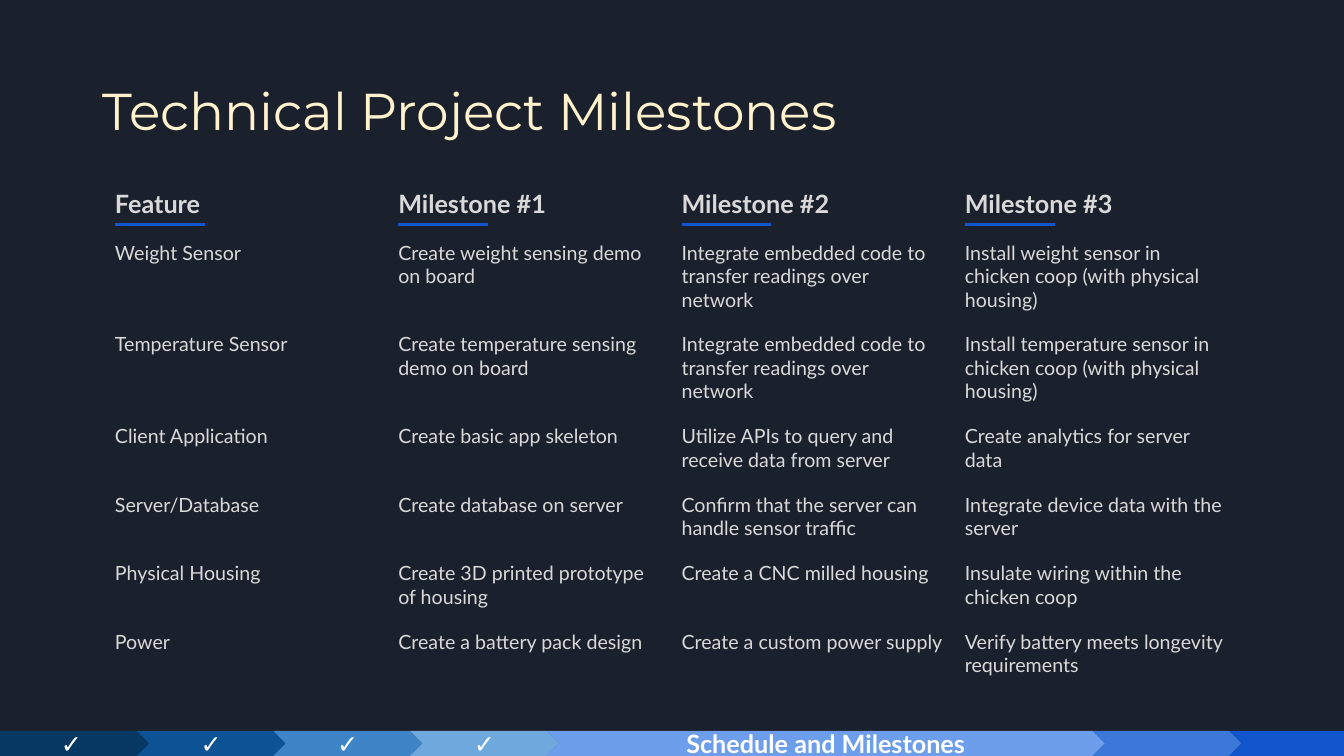
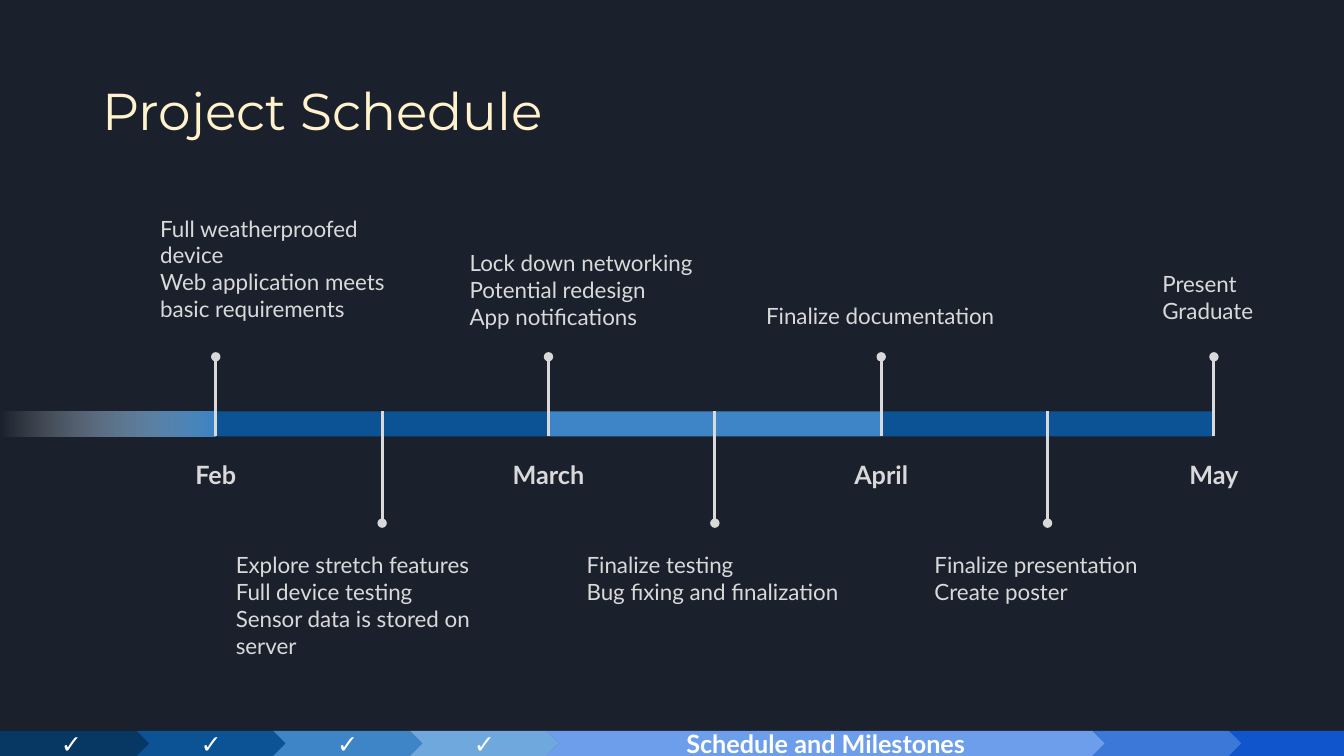
from lxml import etree
from pptx import Presentation
from pptx.dml.color import RGBColor
from pptx.enum import shapes, text
from pptx.oxml.ns import qn
from pptx.util import Inches, Pt

WIDE, HIGH = 13.33, 7.5
NIGHT, CREAM, PALE, WHITE = "1B212C", "FFF2CC", "D9D9D9", "FFFFFF"
NAVY, SKY, ROYAL = "0B5394", "3D85C6", "1155CC"
HEAD, BODY = "Montserrat", "Lato"
PLAIN = "{2D5ABB26-0587-4C30-8999-92F81FD0307C}"
SHAPE = shapes.MSO_SHAPE
MID, TOP = text.MSO_ANCHOR.MIDDLE, text.MSO_ANCHOR.TOP
LEFT, CENTER = text.PP_ALIGN.LEFT, text.PP_ALIGN.CENTER

STEPS = [
    (1.48, "073763", "✓"),
    (1.48, NAVY, "✓"),
    (1.48, SKY, "✓"),
    (1.48, "6FA8DC", "✓"),
    (5.54, "6D9EEB", "Schedule and Milestones"),
    (1.48, "3C78D8", ""),
    (1.48, ROYAL, ""),
]

GOALS = [
    ("Feature", "Milestone #1", "Milestone #2", "Milestone #3"),
    ("Weight Sensor", "Create weight sensing demo on board",
     "Integrate embedded code to transfer readings over network",
     "Install weight sensor in chicken coop (with physical housing)"),
    ("Temperature Sensor", "Create temperature sensing demo on board",
     "Integrate embedded code to transfer readings over network",
     "Install temperature sensor in chicken coop (with physical housing)"),
    ("Client Application", "Create basic app skeleton",
     "Utilize APIs to query and receive data from server",
     "Create analytics for server data"),
    ("Server/Database", "Create database on server",
     "Confirm that the server can handle sensor traffic",
     "Integrate device data with the server"),
    ("Physical Housing", "Create 3D printed prototype of housing",
     "Create a CNC milled housing",
     "Insulate wiring within the chicken coop"),
    ("Power", "Create a battery pack design",
     "Create a custom power supply",
     "Verify battery meets longevity requirements"),
]
ROWS = [0.52, 0.91, 0.91, 0.68, 0.68, 0.68, 0.68]

MONTHS = ["Feb", "March", "April", "May"]
BARS = [NAVY, SKY, NAVY]
ABOVE = [
    (-0.65, -2.05, 2.51, "Full weatherproofed device\nWeb application meets basic requirements"),
    (-0.88, -1.71, 2.77, "Lock down networking\nPotential redesign\nApp notifications"),
    (-1.24, -1.18, 2.51, "Finalize documentation"),
    (-0.61, -1.5, 1.22, "Present\nGraduate"),
]
BELOW = [
    (-1.55, 1.29, 3.1, "Explore stretch features\nFull device testing\nSensor data is stored on server"),
    (-1.37, 1.29, 2.77, "Finalize testing\nBug fixing and finalization"),
    (-1.22, 1.29, 2.43, "Finalize presentation\nCreate poster"),
]


def tint(code):
    """Turn a hex string into a colour."""
    return RGBColor.from_string(code)


def inch(*sizes):
    """Turn numbers into lengths in inches."""
    return [Inches(size) for size in sizes]


def write(frame, words, size, color, font=BODY, bold=False, align=LEFT):
    """Fill a text frame and format its runs."""
    frame.text = words
    frame.word_wrap = True
    for para in frame.paragraphs:
        para.alignment = align
        for run in para.runs:
            run.font.size, run.font.name, run.font.bold = Pt(size), font, bold
            run.font.color.rgb = tint(color)


def label(slide, box, words, size, color, anchor=TOP, pad=0.1, **style):
    """Add a wrapped text box and return its frame."""
    frame = slide.shapes.add_textbox(*inch(*box)).text_frame
    write(frame, words, size, color, **style)
    frame.vertical_anchor = anchor
    frame.margin_left = frame.margin_right = Inches(0.1)
    frame.margin_top = frame.margin_bottom = Inches(pad)
    return frame


def block(slide, kind, box, color):
    """Add a flat filled shape."""
    shape = slide.shapes.add_shape(kind, *inch(*box))
    shape.shadow.inherit = False
    shape.fill.solid()
    shape.fill.fore_color.rgb = tint(color)
    shape.line.fill.background()
    return shape


def rule(slide, ends, color, dot=False):
    """Add a straight line, with a round tip if asked."""
    line = slide.shapes.add_connector(shapes.MSO_CONNECTOR.STRAIGHT, *inch(*ends))
    line.line.color.rgb = tint(color)
    line.line.width = Pt(2.25)
    props = line._element.spPr
    if dot:
        etree.SubElement(props.find(qn("a:ln")), qn("a:tailEnd")).set("type", "oval")
    etree.SubElement(props, qn("a:effectLst"))
    return line


def footer(slide, box):
    """Draw the overlapping progress arrows."""
    left, top, _, high = box
    for spot, (wide, color, words) in enumerate(STEPS):
        kind = SHAPE.CHEVRON if spot else SHAPE.PENTAGON
        arrow = block(slide, kind, (left, top, wide, high), color)
        if words:
            frame = arrow.text_frame
            write(frame, words, 18, WHITE, bold=True, align=CENTER)
            frame.vertical_anchor = MID
            frame.margin_top = frame.margin_bottom = Inches(0.1)
        left += wide - high / 2


def page(deck, title):
    """Add a slide with its title and footer."""
    slide = deck.slides.add_slide(deck.slide_layouts[6])
    frame = label(slide, (0.92, 0.4, 11.5, 1.45), title, 37, CREAM,
                  anchor=MID, pad=0.05, font=HEAD)
    frame.paragraphs[0].line_spacing = 0.9
    footer(slide, (0, HIGH - 0.25, WIDE, 0.25))
    return slide


def clear(cell):
    """Strip the fill and borders of a cell."""
    props = cell._tc.get_or_add_tcPr()
    for side in ("lnL", "lnR", "lnT", "lnB"):
        etree.SubElement(etree.SubElement(props, qn("a:" + side)), qn("a:noFill"))
    cell.fill.background()


def goals(slide, box):
    """Draw the milestone table and the header underlines."""
    left, top, wide, _ = box
    count = len(GOALS[0])
    step = wide / count
    table = slide.shapes.add_table(len(GOALS), count, *inch(*box)).table
    table.first_row = table.horz_banding = False
    table._tbl.tblPr.find(qn("a:tableStyleId")).text = PLAIN
    for col in range(count):
        table.columns[col].width = Inches(step)
        start = left + col * step + 0.1
        rule(slide, (start, top + 0.46, start + 0.89, top + 0.46), ROYAL)
    for row, items in enumerate(GOALS):
        table.rows[row].height = Inches(ROWS[row])
        for col, words in enumerate(items):
            cell = table.cell(row, col)
            clear(cell)
            cell.margin_left = cell.margin_right = Inches(0.1)
            cell.margin_top = cell.margin_bottom = Inches(0.1)
            write(cell.text_frame, words, 14 if row else 18, PALE, bold=not row)


def fade(slide, box):
    """Draw the bar that fades in from the left."""
    bar = block(slide, SHAPE.RECTANGLE, box, SKY)
    bar.fill.gradient()
    bar.fill.gradient_angle = 0
    for stop, color in zip(bar.fill.gradient_stops, (WHITE, SKY)):
        stop.color.rgb = tint(color)
    clear_end = bar._element.spPr.xpath(".//a:gs/a:srgbClr")[0]
    etree.SubElement(clear_end, qn("a:alpha")).set("val", "0")


def notes(slide, marks, top, items):
    """Place each note relative to its mark on the axis."""
    for mark, (shift, drop, wide, words) in zip(marks, items):
        high = 0.2 + 0.27 * len(words.split("\n"))
        label(slide, (mark + shift, top + drop, wide, high), words, 16, PALE)


def axis(slide, box):
    """Draw the month bars, pins, names and notes."""
    left, top, wide, high = box
    step = wide / len(BARS)
    marks = [left + step * spot for spot in range(len(MONTHS))]
    mids = [mark + step / 2 for mark in marks[:-1]]
    fade(slide, (0, top, left, high))
    bars = [block(slide, SHAPE.RECTANGLE, (mark, top, step, high), color)
            for mark, color in zip(marks, BARS)]
    for mid, bar in zip(mids, bars):
        rule(slide, (mid, top, mid, top + 1.11), PALE, dot=True).begin_connect(bar, 0)
    for mark, month in zip(marks, MONTHS):
        rule(slide, (mark, top + high, mark, top - 0.54), PALE, dot=True)
        label(slide, (mark - 0.61, top + 0.38, 1.22, 0.51), month, 18, PALE,
              bold=True, align=CENTER)
    notes(slide, marks, top, ABOVE)
    notes(slide, mids, top, BELOW)


def main():
    """Build and save both slides."""
    deck = Presentation()
    deck.slide_width, deck.slide_height = inch(WIDE, HIGH)
    back = deck.slide_master.background.fill
    back.solid()
    back.fore_color.rgb = tint(NIGHT)
    goals(page(deck, "Technical Project Milestones"), (1.04, 1.77, 11.24, sum(ROWS)))
    axis(page(deck, "Project Schedule"), (2.14, 4.08, 9.9, 0.25))
    deck.save("out.pptx")


if __name__ == "__main__":
    main()
